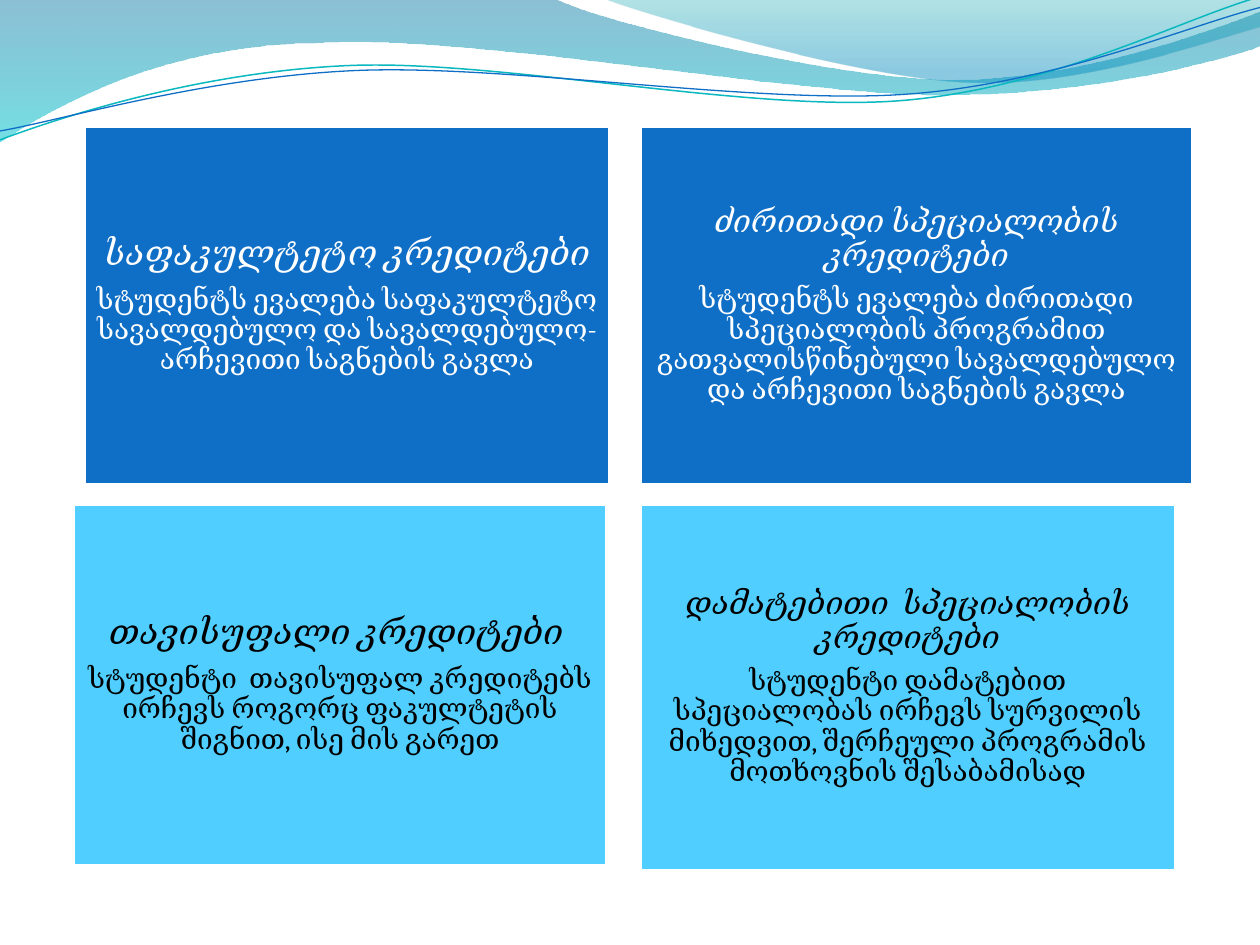
"""Build a slide with four cards on university study credits under a wave banner."""
from math import cos, radians, sin

from lxml import etree
from pptx import Presentation
from pptx.dml.color import RGBColor
from pptx.enum.shapes import MSO_SHAPE
from pptx.enum.text import MSO_ANCHOR, PP_ALIGN
from pptx.oxml.ns import qn
from pptx.util import Inches, Pt

RECTANGLE = MSO_SHAPE.RECTANGLE
MIDDLE = MSO_ANCHOR.MIDDLE
CENTER = PP_ALIGN.CENTER
BLANK_LAYOUT = 6
LINE_TILT = -2.7

THEME = {
    "font": "Cambria",
    "body_size": 16,
    "border": "FFFFFF",
    "border_width": 2,
    "blue": {"fill": "0F6FC6", "text": "FFFFFF"},
    "sky": {"fill": "4FCEFF", "text": "000000"},
    "wide_wave": [(0, "0074A1", 45), (1, "00C6CF", 55)],
    "right_wave": [(0, "00A1A9", 30), (0.8, "008BBF", 45)],
    "teal_line": ("0AB8BF", 0.85),
    "blue_line": ("0F6FC6", 0.75),
}

CARDS = [
    {"box": (0.67, 1, 4.17, 2.85), "style": "blue", "heading_size": 20, "inset": 0.08,
     "heading": "საფაკულტეტო კრედიტები",
     "body": "სტუდენტს ევალება საფაკულტეტო სავალდებულო და "
             "სავალდებულო-არჩევითი საგნების გავლა"},
    {"box": (0.58, 4, 4.24, 2.87), "style": "sky", "heading_size": 20, "inset": 0.08,
     "heading": "თავისუფალი კრედიტები ",
     "body": "სტუდენტი  თავისუფალ კრედიტებს ირჩევს როგორც ფაკულტეტის "
             "შიგნით, ისე მის გარეთ"},
    {"box": (5.08, 1, 4.39, 2.85), "style": "blue", "heading_size": 18, "inset": 0.07,
     "heading": "ძირითადი სპეციალობის კრედიტები",
     "body": "სტუდენტს ევალება ძირითადი სპეციალობის პროგრამით "
             "გათვალისწინებული სავალდებულო და არჩევითი საგნების გავლა"},
    {"box": (5.08, 4, 4.25, 2.91), "style": "sky", "heading_size": 18, "inset": 0.07,
     "heading": "დამატებითი  სპეციალობის კრედიტები",
     "body": "სტუდენტი დამატებით სპეციალობას ირჩევს სურვილის მიხედვით, "
             "შერჩეული პროგრამის მოთხოვნის შესაბამისად"},
]

WAVES = [
    ("wide_wave", [
        [(0, -0.01)],
        [(4.4, -0.01)],
        [(4.76, 0.17), (6.64, 0.63), (7.58, 0.63)],
        [(8.53, 0.63), (9.58, 0.26), (10, 0.09)],
        [(10.01, 0.36)],
        [(9.83, 0.44), (8.7, 0.76), (7.46, 0.75)],
        [(6.22, 0.75), (3.82, 0.28), (2.57, 0.34)],
        [(1.29, 0.35), (0.46, 0.83), (-0.01, 1.13)],
    ]),
    ("right_wave", [
        [(4.79, -0.01)],
        [(5.09, 0.11), (6.82, 0.62), (7.69, 0.65)],
        [(8.56, 0.69), (9.61, 0.32), (10, 0.21)],
        [(10, 0)],
    ]),
]

WAVE_LINES = [
    ("teal_line", (4.99, 0.58), [
        [(0, 1.11)],
        [(0.48, 0.93), (1.58, 0.57), (2.77, 0.52)],
        [(3.95, 0.47), (5.93, 0.89), (7.13, 0.8)],
        [(8.33, 0.71), (9.38, 0.15), (9.98, -0.02)],
    ]),
    ("blue_line", (5, 0.59), [
        [(0, 1.04)],
        [(0.47, 0.96), (1.64, 0.61), (2.83, 0.56)],
        [(4.03, 0.51), (5.97, 0.83), (7.17, 0.75)],
        [(8.36, 0.67), (9.41, 0.21), (10, 0.06)],
    ]),
]


def color(name):
    return RGBColor.from_string(name)


def turn(point, center, degrees):
    angle = radians(degrees)
    x, y = point[0] - center[0], point[1] - center[1]
    return (center[0] + x * cos(angle) - y * sin(angle),
            center[1] + x * sin(angle) + y * cos(angle))


def add_outline(slide, segments, close):
    points = [(Inches(x), Inches(y)) for segment in segments for x, y in segment]
    builder = slide.shapes.build_freeform(*points[0])
    builder.add_line_segments(points[1:], close=close)
    shape = builder.convert_to_shape()
    shape.shadow.inherit = False
    line_elements = iter(shape.element.spPr.findall(".//" + qn("a:lnTo")))
    for segment in segments[1:]:
        first, *others = [next(line_elements) for _ in segment]
        if others:
            first.tag = qn("a:cubicBezTo")
        for element in others:
            first.append(element[0])
            element.getparent().remove(element)
    return shape


def add_wave(slide, style, segments):
    shape = add_outline(slide, segments, True)
    shape.line.fill.background()
    shape.fill.gradient()
    shape.fill.gradient_angle = 270
    for stop, (position, name, _) in zip(shape.fill.gradient_stops, THEME[style]):
        stop.position = position
        stop.color.rgb = color(name)
    color_elements = shape.element.spPr.findall(".//" + qn("a:srgbClr"))
    for element, (_, _, opacity) in zip(color_elements, THEME[style]):
        etree.SubElement(element, qn("a:alpha")).set("val", str(opacity * 1000))


def add_wave_line(slide, style, center, segments):
    level = [[turn(point, center, -LINE_TILT) for point in segment] for segment in segments]
    shape = add_outline(slide, level, False)
    shape.rotation = LINE_TILT
    name, width = THEME[style]
    shape.fill.background()
    shape.line.color.rgb = color(name)
    shape.line.width = Pt(width)


def add_card(slide, card):
    style = THEME[card["style"]]
    shape = slide.shapes.add_shape(RECTANGLE, *map(Inches, card["box"]))
    shape.shadow.inherit = False
    shape.fill.solid()
    shape.fill.fore_color.rgb = color(style["fill"])
    shape.line.color.rgb = color(THEME["border"])
    shape.line.width = Pt(THEME["border_width"])
    frame = shape.text_frame
    frame.word_wrap = True
    frame.vertical_anchor = MIDDLE
    frame.margin_left = frame.margin_right = Inches(card["inset"])
    frame.margin_top = frame.margin_bottom = Inches(card["inset"])
    heading, body = frame.paragraphs[0], frame.add_paragraph()
    for paragraph, text, size, italic in (
        (heading, card["heading"], card["heading_size"], True),
        (body, card["body"], THEME["body_size"], False),
    ):
        paragraph.alignment = CENTER
        paragraph.line_spacing = 0.9
        paragraph.space_after = Pt(0.35 * size)
        run = paragraph.add_run()
        run.text = text
        run.font.name = THEME["font"]
        run.font.size = Pt(size)
        run.font.italic = italic
        run.font.color.rgb = color(style["text"])


def main():
    presentation = Presentation()
    presentation.slide_width = Inches(10)
    presentation.slide_height = Inches(7.5)
    slide = presentation.slides.add_slide(presentation.slide_layouts[BLANK_LAYOUT])
    for style, segments in WAVES:
        add_wave(slide, style, segments)
    for style, center, segments in WAVE_LINES:
        add_wave_line(slide, style, center, segments)
    for card in CARDS:
        add_card(slide, card)
    presentation.save("out.pptx")


if __name__ == "__main__":
    main()
